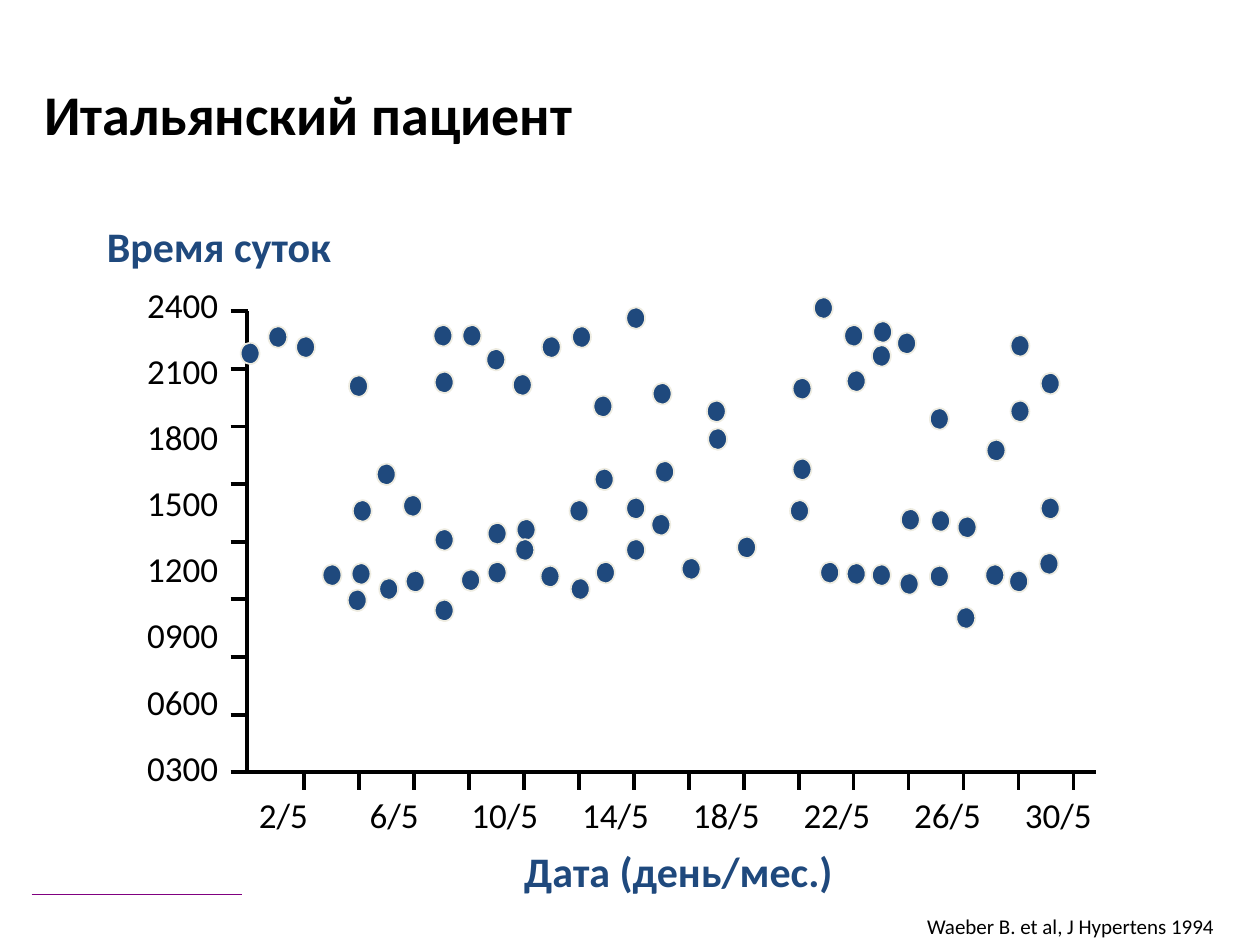
import pptx
import pptx.dml.color
import pptx.enum.shapes
import pptx.enum.text
import pptx.oxml
import pptx.util

PX = 9144  # EMU per px, 100 px to the inch
FONT = "Calibri"
BLACK = pptx.dml.color.RGBColor(0x00, 0x00, 0x00)
NAVY = pptx.dml.color.RGBColor(0x1F, 0x49, 0x7D)
CREAM = pptx.dml.color.RGBColor(0xEE, 0xEC, 0xE1)
PURPLE = pptx.dml.color.RGBColor(0x80, 0x00, 0x80)
ALIGN = pptx.enum.text.PP_ALIGN

TITLE = "Итальянский пациент"
TIME_TITLE = "Время суток"
DATE_TITLE = "Дата (день/мес.)"
CITATION = "Waeber B. et al, J Hypertens 1994"
TIMES = ["2400", "2100", "1800", "1500", "1200", "0900", "0600", "0300"]
DATES = ["2/5", "6/5", "10/5", "14/5", "18/5", "22/5", "26/5", "30/5"]

# Left and top of each dot, in px
DOTS = [
    (191, 272), (213, 259), (235, 267), (277, 298), (345, 295), (344, 258),
    (367, 258), (386, 277), (407, 297), (430, 267), (454, 259), (497, 244),
    (471, 314), (518, 304), (561, 318), (562, 340), (629, 300), (646, 236),
    (672, 294), (670, 258), (692, 274), (712, 264), (693, 255), (738, 324),
    (783, 349), (802, 318), (826, 296), (802, 266), (826, 395), (825, 439),
    (801, 453), (782, 448), (760, 410), (739, 405), (715, 404), (738, 449),
    (759, 482), (714, 455), (692, 448), (672, 447), (651, 446), (627, 397),
    (629, 364), (585, 426), (541, 443), (517, 408), (520, 366), (497, 395),
    (497, 428), (473, 446), (453, 459), (452, 397), (472, 372), (410, 412),
    (409, 428), (429, 449), (387, 446), (387, 415), (366, 452), (345, 476),
    (345, 420), (320, 393), (299, 368), (280, 397), (256, 448), (276, 468),
    (279, 447), (301, 459), (322, 453),
]
DOT_WIDTH, DOT_HEIGHT = 15, 17

AXIS_LEFT, AXIS_TOP, AXIS_RIGHT, AXIS_BOTTOM = 196, 247, 870, 613
TICK_LENGTH = 14
TIME_TICKS, DATE_TICKS = 9, 15
FIRST_DATE_TICK, LAST_DATE_TICK = 241, 852
FIRST_TIME_LABEL, LAST_TIME_LABEL = 224, 591
FIRST_DATE_LABEL, LAST_DATE_LABEL = 173, 788


def px(value):
    return pptx.util.Emu(round(value * PX))


def evenly(first, last, count):
    """Return count positions at equal steps from first to last."""
    return [first + (last - first) * i / (count - 1) for i in range(count)]


def write(shape, text, size, color=BLACK, bold=False, align=ALIGN.LEFT, spacing=None):
    paragraph = shape.text_frame.paragraphs[0]
    paragraph.alignment = align
    if spacing:
        paragraph.line_spacing = spacing
    run = paragraph.add_run()
    run.text = text
    run.font.name = FONT
    run.font.size = pptx.util.Pt(size)
    run.font.bold = bold
    run.font.color.rgb = color


def add_text(slide, box, text, size, wrap=True, **style):
    shape = slide.shapes.add_textbox(*map(px, box))
    shape.text_frame.word_wrap = wrap
    shape.text_frame.auto_size = pptx.enum.text.MSO_AUTO_SIZE.SHAPE_TO_FIT_TEXT
    write(shape, text, size, **style)


def add_line(slide, start, end, color=BLACK, width=2.25):
    line = slide.shapes.add_connector(
        pptx.enum.shapes.MSO_CONNECTOR.STRAIGHT, *map(px, start + end))
    line.line.color.rgb = color
    line.line.width = pptx.util.Pt(width)
    properties = line._element.spPr
    properties.append(properties.makeelement(pptx.oxml.ns.qn("a:effectLst"), {}))


def add_axes(slide):
    builder = slide.shapes.build_freeform(AXIS_LEFT, AXIS_TOP, scale=PX)
    builder.add_line_segments(
        [(AXIS_LEFT, AXIS_BOTTOM), (AXIS_RIGHT, AXIS_BOTTOM)], close=False)
    axes = builder.convert_to_shape()
    axes.shadow.inherit = False
    axes.fill.background()
    axes.line.color.rgb = BLACK
    axes.line.width = pptx.util.Pt(2.25)
    for y in evenly(AXIS_TOP, AXIS_BOTTOM, TIME_TICKS):
        add_line(slide, (AXIS_LEFT + 1 - TICK_LENGTH, y), (AXIS_LEFT + 1, y))
    for x in evenly(FIRST_DATE_TICK, LAST_DATE_TICK, DATE_TICKS):
        add_line(slide, (x, AXIS_BOTTOM), (x, AXIS_BOTTOM + TICK_LENGTH))


def add_dot(slide, left, top):
    dot = slide.shapes.add_shape(
        pptx.enum.shapes.MSO_SHAPE.OVAL,
        *map(px, (left, top, DOT_WIDTH, DOT_HEIGHT)))
    dot.shadow.inherit = False
    dot.fill.solid()
    dot.fill.fore_color.rgb = NAVY
    dot.line.color.rgb = CREAM
    dot.line.width = pptx.util.Pt(1)


def add_labels(slide):
    lefts = evenly(FIRST_DATE_LABEL, LAST_DATE_LABEL, len(DATES))
    for left, date in zip(lefts, DATES):
        add_text(slide, (left, 629, 104, 40), date, 20, align=ALIGN.CENTER, spacing=0.9)
    tops = evenly(FIRST_TIME_LABEL, LAST_TIME_LABEL, len(TIMES))
    for top, time in zip(tops, TIMES):
        add_text(slide, (69, top, 114, 40), time, 20, align=ALIGN.RIGHT, spacing=0.9)
    heading = {"color": NAVY, "bold": True, "spacing": 0.9}
    add_text(slide, (75, 175, 231, 46), TIME_TITLE, 24, align=ALIGN.JUSTIFY, **heading)
    add_text(slide, (333, 671, 411, 46), DATE_TITLE, 24, align=ALIGN.CENTER, **heading)


def add_title(slide):
    title = slide.shapes.title
    title.left, title.top, title.width, title.height = map(px, (25, 58, 622, 63))
    title.text_frame.vertical_anchor = pptx.enum.text.MSO_ANCHOR.TOP
    title.text_frame.auto_size = pptx.enum.text.MSO_AUTO_SIZE.NONE
    write(title, TITLE, 32, bold=True)


def main():
    presentation = pptx.Presentation()
    presentation.slide_width, presentation.slide_height = px(1000), px(750)
    slide = presentation.slides.add_slide(presentation.slide_layouts[5])
    add_title(slide)
    add_axes(slide)
    for left, top in DOTS:
        add_dot(slide, left, top)
    add_labels(slide)
    add_line(slide, (25, 710), (192, 710), PURPLE, 1)
    add_text(slide, (726, 720, 274, 30), CITATION, 12, wrap=False)
    presentation.save("out.pptx")


if __name__ == "__main__":
    main()
